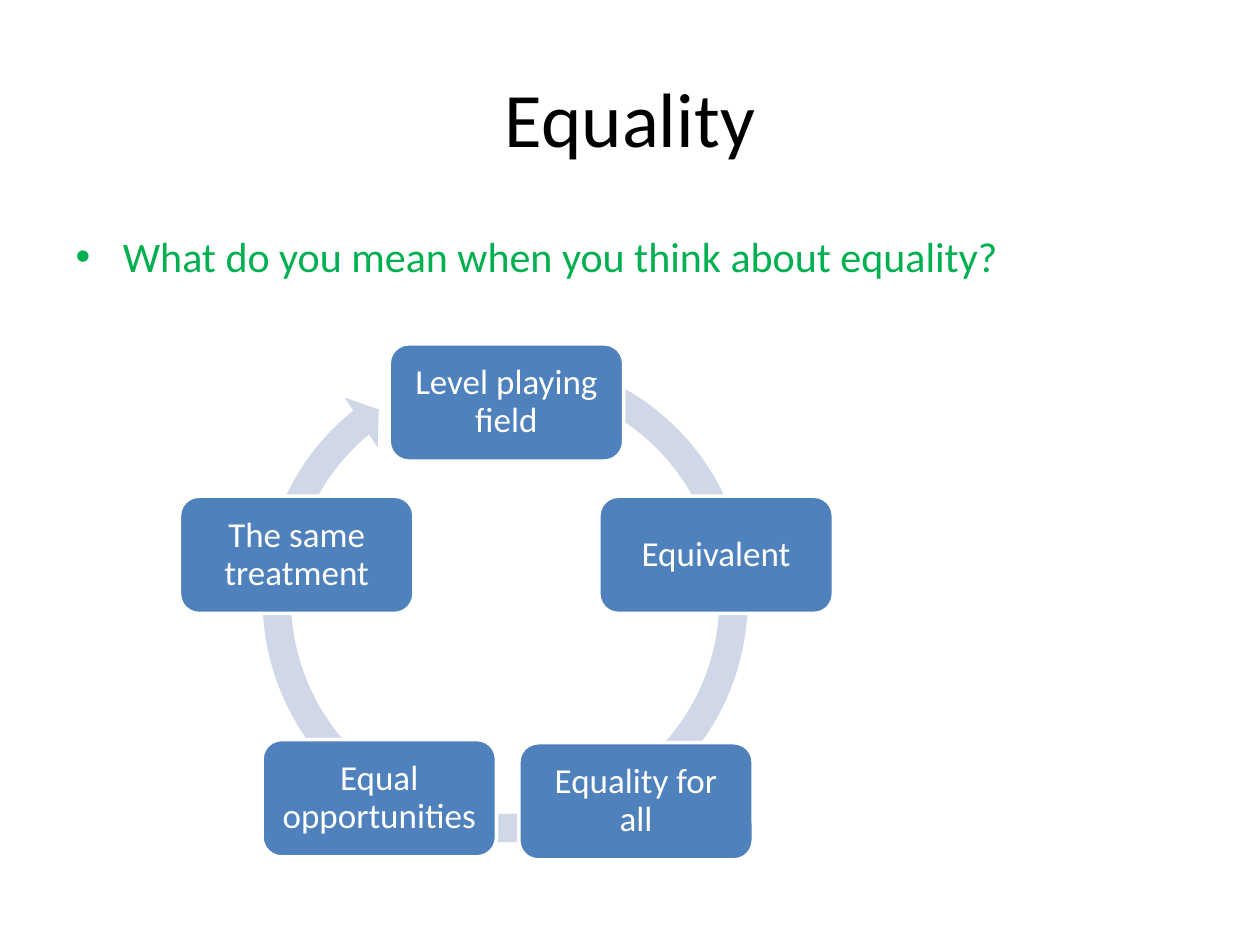
import math
from dataclasses import dataclass

import pptx
import pptx.dml.color
import pptx.enum.shapes
import pptx.enum.text
import pptx.util

Pt = pptx.util.Pt
Shape = pptx.enum.shapes.MSO_SHAPE
Align = pptx.enum.text.PP_ALIGN


@dataclass(frozen=True)
class Theme:
    """Colours and type sizes of the slide."""
    face: str = "Calibri"
    ink: str = "000000"
    green: str = "00B050"
    blue: str = "4F81BD"
    pale: str = "D0D8E8"
    white: str = "FFFFFF"
    title: int = 44
    body: int = 24
    label: int = 20


THEME = Theme()
IDEAS = ["Level playing field", "Equivalent", "Equality for all",
         "Equal opportunities", "The same treatment"]
NUDGE = {"Equal opportunities": (1.4, -1.8)}
MID_X, MID_Y, RADIUS = 289.4, 356, 126
BOX_W, BOX_H = 134, 67


def color(code):
    """Turn a hex code into a colour."""
    return pptx.dml.color.RGBColor.from_string(code)


def style(para, size, code):
    """Set the font of a paragraph."""
    para.font.name = THEME.face
    para.font.size = Pt(size)
    para.font.color.rgb = color(code)


def place(shape, left, top, width, height):
    """Move and size a shape, in points."""
    shape.left, shape.top = Pt(left), Pt(top)
    shape.width, shape.height = Pt(width), Pt(height)


def fill_holder(holder, text, area, size, code):
    """Put styled text in a placeholder and return its paragraph."""
    place(holder, *area)
    holder.text_frame.text = text
    para = holder.text_frame.paragraphs[0]
    style(para, size, code)
    return para


def add_solid(slide, kind, area, code):
    """Add a flat preset shape without a line."""
    shape = slide.shapes.add_shape(kind, *map(Pt, area))
    shape.shadow.inherit = False
    shape.fill.solid()
    shape.fill.fore_color.rgb = color(code)
    shape.line.fill.background()
    return shape


def add_ring(slide):
    """Add the round arrow behind the ideas."""
    ring = add_solid(slide, Shape.CIRCULAR_ARROW,
                     (141.1, 195.1, 295.2, 295.2), THEME.pale)
    for i, value in enumerate((0.055, 3.307, 138.529, 173.393, 0.058)):
        ring.adjustments[i] = value


def add_idea(slide, text, mid_x, mid_y):
    """Add a rounded box centred on a point."""
    area = (mid_x - BOX_W / 2, mid_y - BOX_H / 2, BOX_W, BOX_H)
    box = add_solid(slide, Shape.ROUNDED_RECTANGLE, area, THEME.blue)
    box.line.color.rgb = color(THEME.white)
    box.line.width = Pt(2)
    frame = box.text_frame
    frame.word_wrap = True
    frame.vertical_anchor = pptx.enum.text.MSO_ANCHOR.MIDDLE
    frame.margin_left = frame.margin_right = Pt(6)
    frame.margin_top = frame.margin_bottom = Pt(6)
    frame.text = text
    para = frame.paragraphs[0]
    para.alignment = Align.CENTER
    para.line_spacing = 0.9
    style(para, THEME.label, THEME.white)


def add_cycle(slide):
    """Space the ideas evenly round the ring, from the top."""
    add_ring(slide)
    for i, text in enumerate(IDEAS):
        turn = math.tau * i / len(IDEAS)
        dx, dy = NUDGE.get(text, (0, 0))
        add_idea(slide, text, MID_X + RADIUS * math.sin(turn) + dx,
                 MID_Y - RADIUS * math.cos(turn) + dy)


def main():
    """Build and save the slide."""
    deck = pptx.Presentation()
    deck.slide_width, deck.slide_height = Pt(720), Pt(540)
    slide = deck.slides.add_slide(deck.slide_layouts[1])
    title = fill_holder(slide.shapes.title, "Equality",
                        (36, 21.6, 648, 90), THEME.title, THEME.ink)
    title.alignment = Align.CENTER
    fill_holder(slide.placeholders[1],
                "What do you mean when you think about equality?",
                (36, 128.2, 613.4, 294.5), THEME.body, THEME.green)
    add_cycle(slide)
    deck.save("out.pptx")


main()
